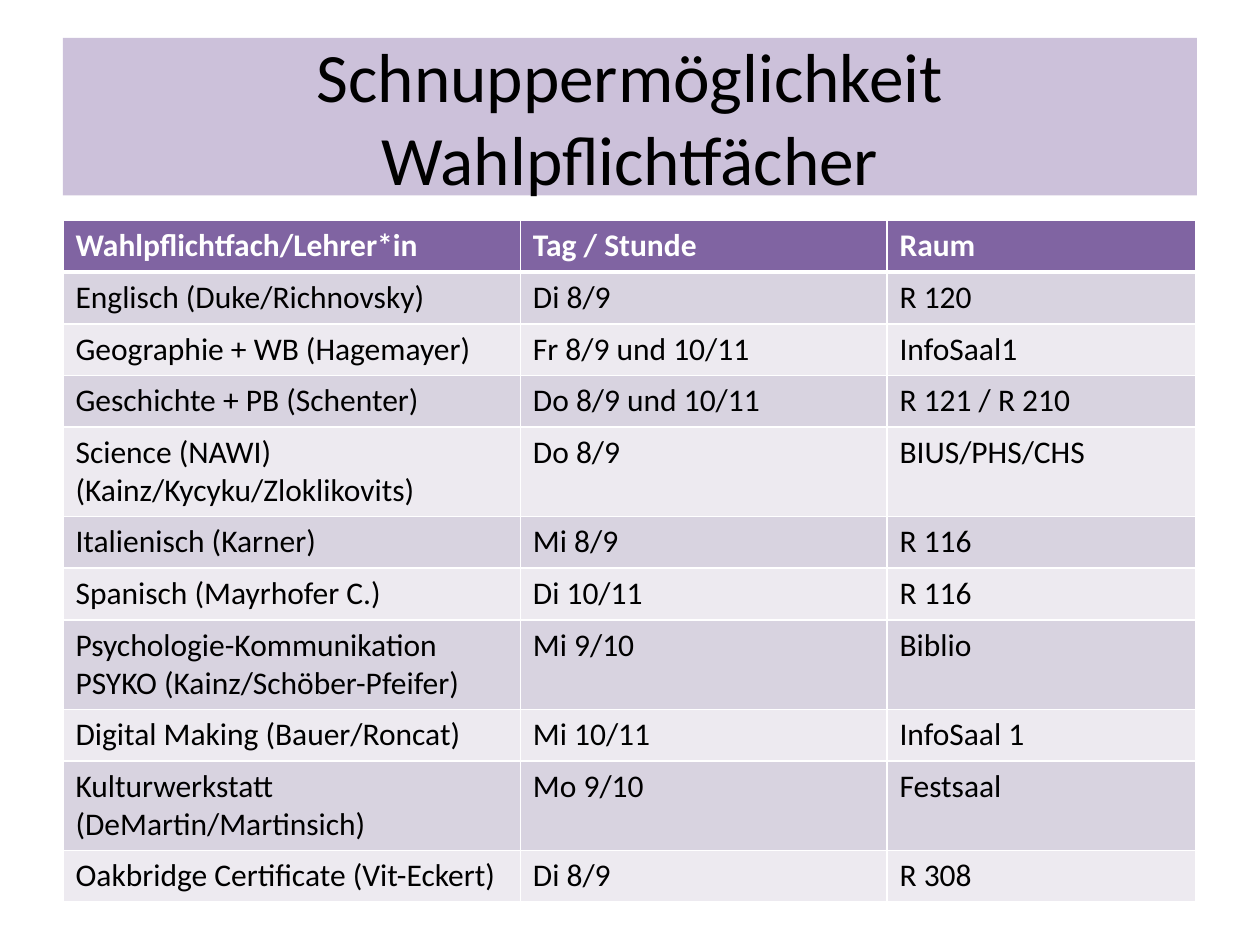
"""Build a timetable slide of trial lessons for elective subjects."""
from lxml.etree import SubElement
from pptx import Presentation
from pptx.dml.color import RGBColor
from pptx.enum.shapes import MSO_SHAPE
from pptx.enum.text import MSO_ANCHOR, PP_ALIGN
from pptx.oxml.ns import qn
from pptx.util import Inches, Pt

TITLE = "Schnuppermöglichkeit Wahlpflichtfächer"
HEADER = ("Wahlpflichtfach/Lehrer*in", "Tag / Stunde", "Raum")
SUBJECTS = [
    ("Englisch (Duke/Richnovsky)", "Di 8/9", "R 120"),
    ("Geographie + WB (Hagemayer)", "Fr 8/9 und 10/11", "InfoSaal1"),
    ("Geschichte + PB (Schenter)", "Do 8/9 und 10/11", "R 121 / R 210"),
    ("Science (NAWI)\n(Kainz/Kycyku/Zloklikovits)", "Do 8/9", "BIUS/PHS/CHS"),
    ("Italienisch (Karner)", "Mi 8/9", "R 116"),
    ("Spanisch (Mayrhofer C.)", "Di 10/11", "R 116"),
    ("Psychologie-Kommunikation PSYKO (Kainz/Schöber-Pfeifer)", "Mi 9/10", "Biblio"),
    ("Digital Making (Bauer/Roncat)", "Mi 10/11", "InfoSaal 1"),
    ("Kulturwerkstatt (DeMartin/Martinsich)", "Mo 9/10", "Festsaal"),
    ("Oakbridge Certificate (Vit-Eckert)", "Di 8/9", "R 308"),
]
COLORS = {
    "title": "CCC1DA",
    "header": "8064A2",
    "odd": "D8D3E0",
    "even": "EDEAF0",
    "light": "FFFFFF",
    "dark": "000000",
}
FONT = "Calibri"
LEFT, WIDTH = 0.5, 9
COLUMN_WIDTHS = (3.63, 2.91, 2.45)
ROW_HEIGHT = 0.41


def paint(fill, color):
    fill.solid()
    fill.fore_color.rgb = RGBColor.from_string(COLORS[color])


def format_text(text_frame, size, color, bold=False):
    for paragraph in text_frame.paragraphs:
        for run in paragraph.runs:
            run.font.name = FONT
            run.font.size = Pt(size)
            run.font.bold = bold
            run.font.color.rgb = RGBColor.from_string(COLORS[color])


def set_borders(cell, widths):
    properties = cell._tc.get_or_add_tcPr()
    for side, width in widths.items():
        line = SubElement(properties, qn(f"a:ln{side}"), w=str(Pt(width)))
        fill = SubElement(line, qn("a:solidFill"))
        SubElement(fill, qn("a:srgbClr"), val=COLORS["light"])


def add_title(slide):
    shape = slide.shapes.add_shape(
        MSO_SHAPE.RECTANGLE, Inches(LEFT), Inches(0.3), Inches(WIDTH), Inches(1.25))
    shape.shadow.inherit = False
    paint(shape.fill, "title")
    shape.line.fill.background()
    text_frame = shape.text_frame
    text_frame.word_wrap = True
    text_frame.vertical_anchor = MSO_ANCHOR.MIDDLE
    text_frame.text = TITLE
    text_frame.paragraphs[0].alignment = PP_ALIGN.CENTER
    format_text(text_frame, 39.6, "dark")


def add_timetable(slide):
    rows = [HEADER, *SUBJECTS]
    table = slide.shapes.add_table(
        len(rows), len(HEADER), Inches(LEFT), Inches(1.75),
        Inches(WIDTH), Inches(ROW_HEIGHT * len(rows))).table
    for column, width in zip(table.columns, COLUMN_WIDTHS):
        column.width = Inches(width)
    for row_index, texts in enumerate(rows):
        is_header = row_index == 0
        fill = "header" if is_header else ("even", "odd")[row_index % 2]
        borders = {"L": 1, "R": 1, "T": 3 if row_index == 1 else 1, "B": 3 if is_header else 1}
        table.rows[row_index].height = Inches(ROW_HEIGHT)
        for column_index, text in enumerate(texts):
            cell = table.cell(row_index, column_index)
            cell.text_frame.text = text
            format_text(cell.text_frame, 18, "light" if is_header else "dark", is_header)
            set_borders(cell, borders)
            paint(cell.fill, fill)


def main():
    presentation = Presentation()
    presentation.slide_width = Inches(10)
    presentation.slide_height = Inches(7.5)
    slide = presentation.slides.add_slide(presentation.slide_layouts[6])
    add_title(slide)
    add_timetable(slide)
    presentation.save("out.pptx")


if __name__ == "__main__":
    main()
